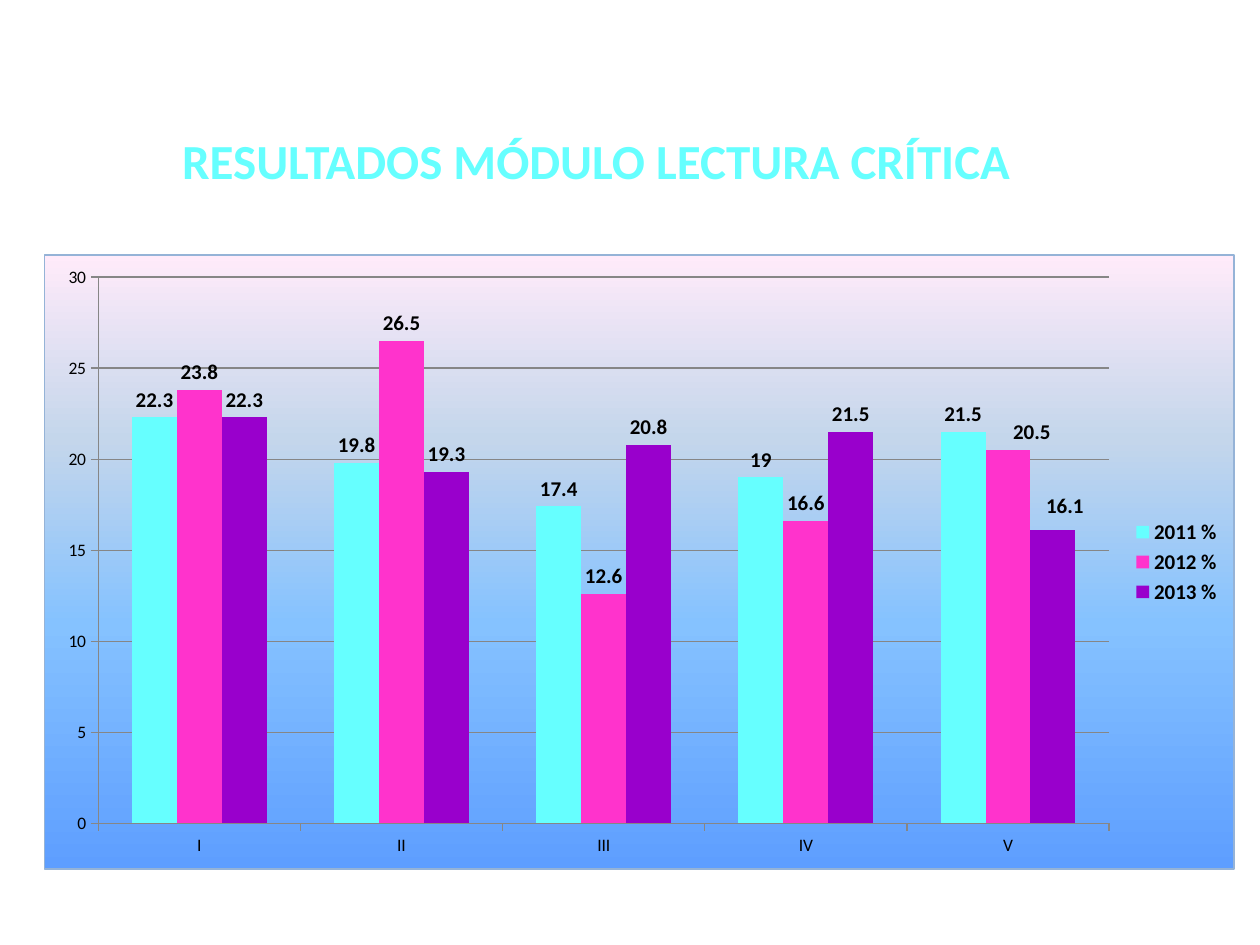
from dataclasses import dataclass

from lxml import etree
from pptx import Presentation
from pptx.chart.data import CategoryChartData
from pptx.dml.color import RGBColor
from pptx.enum.chart import XL_CHART_TYPE, XL_LABEL_POSITION, XL_LEGEND_POSITION, XL_TICK_MARK
from pptx.enum.text import MSO_ANCHOR, PP_ALIGN
from pptx.oxml import parse_xml
from pptx.oxml.ns import nsdecls, qn
from pptx.util import Cm, Pt


@dataclass(frozen=True)
class Theme:
    font: str = "Calibri"
    title: str = "66FFFF"
    text: str = "000000"
    grid: str = "868686"
    border: str = "95B3D7"
    years: tuple = ("66FFFF", "FF33CC", "9900CC")
    background: tuple = ((0, "5E9EFF"), (40, "85C2FF"), (70, "C4D6EB"), (100, "FFEBFA"))
    title_size: int = 28
    label_size: int = 12
    axis_size: int = 10
    line_width: float = 0.75


theme = Theme()


def style_font(font, size, color, bold=False):
    font.name = theme.font
    font.size = Pt(size)
    font.bold = bold
    font.color.rgb = RGBColor.from_string(color)


def manual_layout(**values):
    layout = etree.Element(qn("c:layout"))
    manual = etree.SubElement(layout, qn("c:manualLayout"))
    for tag, value in values.items():
        etree.SubElement(manual, qn(f"c:{tag}")).set("val", str(value))
    return layout


prs = Presentation()
prs.slide_width, prs.slide_height = Cm(25.4), Cm(19.05)
slide = prs.slides.add_slide(prs.slide_layouts[5])

# Title
title = slide.shapes.title
title.left, title.top, title.width, title.height = Cm(2.31), Cm(2.51), Cm(19.41), Cm(1.45)
title.text_frame.text = "RESULTADOS MÓDULO LECTURA CRÍTICA"
title.text_frame.word_wrap = True
title.text_frame.vertical_anchor = MSO_ANCHOR.TOP
heading = title.text_frame.paragraphs[0]
heading.alignment = PP_ALIGN.CENTER
style_font(heading.runs[0].font, theme.title_size, theme.title, bold=True)

# Results by level and year
results = CategoryChartData()
results.categories = ["I", "II", "III", "IV", "V"]
results.add_series("2011 %", (22.3, 19.8, 17.4, 19, 21.5))
results.add_series("2012 %", (23.8, 26.5, 12.6, 16.6, 20.5))
results.add_series("2013 %", (22.3, 19.3, 20.8, 21.5, 16.1))
chart = slide.shapes.add_chart(
    XL_CHART_TYPE.COLUMN_CLUSTERED, Cm(0.89), Cm(5.13), Cm(24), Cm(12.4), results
).chart
chart.has_title = False
style_font(chart.font, theme.axis_size, theme.text)

# Legend
chart.has_legend = True
chart.legend.position = XL_LEGEND_POSITION.RIGHT
chart.legend.include_in_layout = False
style_font(chart.legend.font, theme.label_size, theme.text, bold=True)

# Axes
scores = chart.value_axis
scores.minimum_scale, scores.maximum_scale, scores.major_unit = 0, 30, 5
scores.has_major_gridlines = True
for axis in (chart.category_axis, scores):
    axis.major_tick_mark = XL_TICK_MARK.OUTSIDE
for line in (chart.category_axis.format.line, scores.format.line, scores.major_gridlines.format.line):
    line.color.rgb = RGBColor.from_string(theme.grid)
    line.width = Pt(theme.line_width)

# Columns and their values
columns = chart.plots[0]
columns.gap_width = 150
columns.vary_by_categories = False
for year, color in zip(columns.series, theme.years):
    year.format.fill.solid()
    year.format.fill.fore_color.rgb = RGBColor.from_string(color)
    year.data_labels.show_value = True
    year.data_labels.position = XL_LABEL_POSITION.OUTSIDE_END
    style_font(year.data_labels.font, theme.label_size, theme.text, bold=True)

# The last two values of level V are moved aside
for year in list(columns.series)[1:]:
    label = year.points[4].data_label
    style_font(label.font, theme.label_size, theme.text, bold=True)
    label.position = XL_LABEL_POSITION.OUTSIDE_END
offsets = ((0.02, 0), (0.01, -0.01))
for label_xml, (x, y) in zip(chart.element.xpath(".//c:dLbl"), offsets):
    label_xml.find(qn("c:idx")).addnext(manual_layout(x=x, y=y))

# Plot area position
plot_area = chart.element.xpath(".//c:plotArea")[0]
for automatic in plot_area.findall(qn("c:layout")):
    plot_area.remove(automatic)
plot_area.insert(0, manual_layout(
    layoutTarget="inner", xMode="edge", yMode="edge", x=0.045, y=0.036, w=0.85, h=0.89))

# Gradient background and border
stops = "".join(
    f'<a:gs pos="{pos * 1000}"><a:srgbClr val="{color}"/></a:gs>' for pos, color in theme.background)
frame = parse_xml(
    f'<c:spPr {nsdecls("c", "a")}><a:gradFill><a:gsLst>{stops}</a:gsLst>'
    f'<a:lin ang="{270 * 60000}" scaled="0"/></a:gradFill>'
    f'<a:ln w="{Pt(theme.line_width)}"><a:solidFill><a:srgbClr val="{theme.border}"/>'
    '</a:solidFill></a:ln></c:spPr>')
chart.element.find(qn("c:chart")).addnext(frame)

prs.save("out.pptx")
